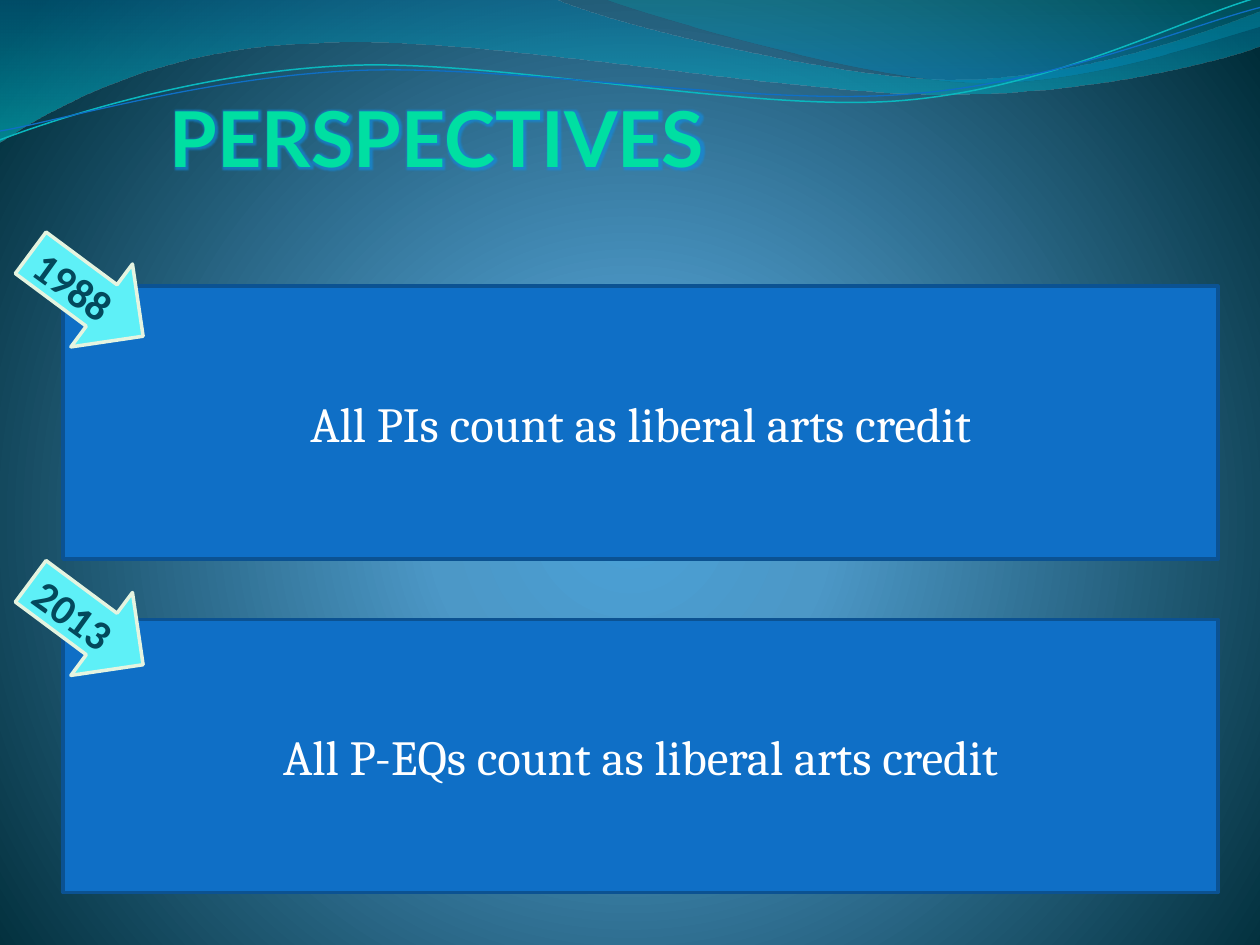
import math
from dataclasses import dataclass
from typing import NamedTuple

from lxml import etree
from pptx import Presentation
from pptx import util as u
from pptx.dml.color import RGBColor
from pptx.enum import shapes, text
from pptx.oxml import ns, parse_xml


class Stop(NamedTuple):
    position: int
    color: str
    opacity: int = 100


@dataclass(frozen=True)
class Theme:
    title_font: str = "Lato"
    body_font: str = "Cambria"
    year_font: str = "Calibri"
    title_size: int = 44
    body_size: int = 28
    year_size: int = 24
    panel: str = "0F6FC6"
    panel_edge: str = "0B5292"
    panel_text: str = "FFFFFF"
    arrow: str = "5EF0F7"
    arrow_edge: str = "E5F4E0"
    year_text: str = "03495C"
    title_edge: str = "00A578"
    title_glow: str = "0F8FE8"
    edge_width: float = 2
    background: tuple = (Stop(0, "4AA0D6"), Stop(25, "4C98C7"), Stop(100, "002C38"))
    title: tuple = (Stop(0, "006F51"), Stop(43, "00DFA2"),
                    Stop(48, "00D097"), Stop(100, "006F51"))


THEME = Theme()


class Wave(NamedTuple):
    """A curve in points: each step is a line end (x, y) or a Bezier (6 numbers)."""
    start: tuple
    steps: tuple
    fill: tuple = ()
    line: str = ""
    width: float = 0
    tilt: float = 0
    pivot: tuple = (0, 0)


class Perspective(NamedTuple):
    year: str
    message: str
    panel_top: float
    arrow_top: float


WAVES = (
    Wave((0, 0), (
        (316.8, -0.7), (342.7, 12.2, 478.1, 45.4, 545.8, 45.4),
        (614.2, 45.4, 689.8, 18.7, 720, 6.5), (720.7, 25.9),
        (707.8, 31.7, 626.4, 54.7, 537.1, 54), (447.8, 54, 275, 20.2, 185, 24.5),
        (92.9, 25.9, 33.1, 59.8, -0.7, 81.4)),
        fill=(Stop(0, "0074A1", 45), Stop(100, "00C6CF", 55))),
    Wave((344.9, -0.7), (
        (366.5, 7.9, 491, 44.6, 553.7, 46.8),
        (616.3, 49.7, 691.9, 23, 720, 15.1), (720, 0)),
        fill=(Stop(0, "00A1A9", 30), Stop(80, "008BBF", 45))),
    Wave((0, 79.9), (
        (34.6, 67, 113.8, 41, 199.4, 37.4), (284.4, 33.8, 427, 64.1, 513.4, 57.6),
        (599.8, 51.1, 675.4, 10.8, 718.6, -1.4)),
        line="0AB8BF", width=0.85, tilt=-2.7, pivot=(359.3, 41.4)),
    Wave((0, 74.9), (
        (33.8, 69.1, 118.1, 43.9, 203.8, 40.3), (290.2, 36.7, 429.8, 60.5, 516.2, 54),
        (601.9, 48.2, 677.5, 15.1, 720, 4.3)),
        line="0F6FC6", width=0.75, tilt=-2.7, pivot=(359.6, 42.5)),
)

PERSPECTIVES = (
    Perspective("1988", "All PIs count as liberal arts credit", 163.5, 128.3),
    Perspective("2013", "All P-EQs count as liberal arts credit", 354, 316),
)


def set_gradient(fill, owner, stops: tuple, circle: bool = False):
    """Give the fill inside owner the stops, running downwards or from a centre."""
    fill.gradient()
    gradient = owner.find(".//" + ns.qn("a:gradFill"))
    for child in list(gradient):
        gradient.remove(child)
    stop_list = etree.SubElement(gradient, ns.qn("a:gsLst"))
    for stop in stops:
        item = etree.SubElement(stop_list, ns.qn("a:gs"), pos=str(stop.position * 1000))
        color = etree.SubElement(item, ns.qn("a:srgbClr"), val=stop.color)
        if stop.opacity < 100:
            etree.SubElement(color, ns.qn("a:alpha"), val=str(stop.opacity * 1000))
    if circle:
        direction = etree.SubElement(gradient, ns.qn("a:path"), path="circle")
        etree.SubElement(direction, ns.qn("a:fillToRect"),
                         l="10000", t="110000", r="10000", b="100000")
    else:
        etree.SubElement(gradient, ns.qn("a:lin"), ang="5400000", scaled="0")
    return gradient


def level_point(wave: Wave, x: float, y: float) -> tuple:
    """Undo the tilt of the wave, which the shape's rotation puts back."""
    angle = math.radians(-wave.tilt)
    dx, dy = x - wave.pivot[0], y - wave.pivot[1]
    return (u.Pt(wave.pivot[0] + dx * math.cos(angle) - dy * math.sin(angle)),
            u.Pt(wave.pivot[1] + dx * math.sin(angle) + dy * math.cos(angle)))


def draw_outline(slide, start: tuple, points: list, close: bool):
    builder = slide.shapes.build_freeform(*start)
    builder.add_line_segments(points, close=close)
    shape = builder.convert_to_shape()
    shape.shadow.inherit = False
    return shape


def draw_wave(slide, wave: Wave) -> None:
    points = [level_point(wave, *step[index:index + 2])
              for step in wave.steps for index in range(0, len(step), 2)]
    shape = draw_outline(slide, level_point(wave, *wave.start), points, bool(wave.fill))
    shape.rotation = wave.tilt
    # Join the three points of each Bezier step into one curve
    segments = iter(shape.element.findall(".//" + ns.qn("a:lnTo")))
    for step in wave.steps:
        group = [next(segments) for _ in range(len(step) // 2)]
        if len(group) == 3:
            curve = etree.Element(ns.qn("a:cubicBezTo"))
            group[0].addprevious(curve)
            for segment in group:
                curve.append(segment[0])
                segment.getparent().remove(segment)
    if wave.fill:
        set_gradient(shape.fill, shape.element, wave.fill)
        shape.line.fill.background()
    else:
        shape.fill.background()
        shape.line.color.rgb = RGBColor.from_string(wave.line)
        shape.line.width = u.Pt(wave.width)


def draw_block(slide, kind, box: tuple, fill: str, edge: str, rotation: float = 0):
    shape = slide.shapes.add_shape(kind, *map(u.Pt, box))
    shape.shadow.inherit = False
    shape.rotation = rotation
    shape.fill.solid()
    shape.fill.fore_color.rgb = RGBColor.from_string(fill)
    shape.line.color.rgb = RGBColor.from_string(edge)
    shape.line.width = u.Pt(THEME.edge_width)
    return shape


def write(shape, words: str, font: str, size: float, color: str = "", bold: bool = False,
          anchor=text.MSO_ANCHOR.TOP, align=text.PP_ALIGN.LEFT):
    frame = shape.text_frame
    frame.word_wrap = True
    frame.vertical_anchor = anchor
    frame.text = words
    frame.paragraphs[0].alignment = align
    run = frame.paragraphs[0].runs[0]
    run.font.name, run.font.size, run.font.bold = font, u.Pt(size), bold
    if color:
        run.font.color.rgb = RGBColor.from_string(color)
    return run


def draw_title(slide, words: str) -> None:
    left, top, right, bottom = map(u.Pt, (90, 48.2, 414, 108.7))
    shape = draw_outline(slide, (left, top),
                         [(right, top), (right, bottom), (left, bottom)], True)
    shape.fill.background()
    shape.line.fill.background()
    run = write(shape, words, THEME.title_font, THEME.title_size, bold=True)
    gradient = set_gradient(run.font.fill, shape.element, THEME.title)
    # Thin outline and soft glow around the letters
    gradient.addprevious(parse_xml(
        f'<a:ln {ns.nsdecls("a")} w="{u.Pt(0.71)}"><a:solidFill>'
        f'<a:srgbClr val="{THEME.title_edge}"/></a:solidFill></a:ln>'))
    gradient.addnext(parse_xml(
        f'<a:effectLst {ns.nsdecls("a")}><a:glow rad="{u.Pt(5)}">'
        f'<a:srgbClr val="{THEME.title_glow}"><a:alpha val="60000"/></a:srgbClr>'
        f'</a:glow></a:effectLst>'))


def draw_perspective(slide, item: Perspective) -> None:
    # Panel with its message
    panel = draw_block(slide, shapes.MSO_SHAPE.RECTANGLE, (36, item.panel_top, 660, 156),
                       THEME.panel, THEME.panel_edge)
    write(panel, item.message, THEME.body_font, THEME.body_size, THEME.panel_text,
          anchor=text.MSO_ANCHOR.MIDDLE, align=text.PP_ALIGN.CENTER)
    # Tilted arrow and its year
    draw_block(slide, shapes.MSO_SHAPE.DOWN_ARROW, (20.2, item.arrow_top, 59, 80),
               THEME.arrow, THEME.arrow_edge, rotation=306.6)
    label = slide.shapes.add_textbox(u.Pt(9.4), u.Pt(item.arrow_top + 20.8), u.Pt(76), u.Pt(36))
    label.rotation = 35.9
    write(label, item.year, THEME.year_font, THEME.year_size, THEME.year_text, bold=True)


def main() -> None:
    presentation = Presentation()
    presentation.slide_width, presentation.slide_height = u.Pt(720), u.Pt(540)
    slide = presentation.slides.add_slide(presentation.slide_layouts[6])
    set_gradient(slide.background.fill, slide.element, THEME.background, circle=True)
    for wave in WAVES:
        draw_wave(slide, wave)
    draw_title(slide, "PERSPECTIVES")
    for item in PERSPECTIVES:
        draw_perspective(slide, item)
    presentation.save("out.pptx")


if __name__ == "__main__":
    main()
